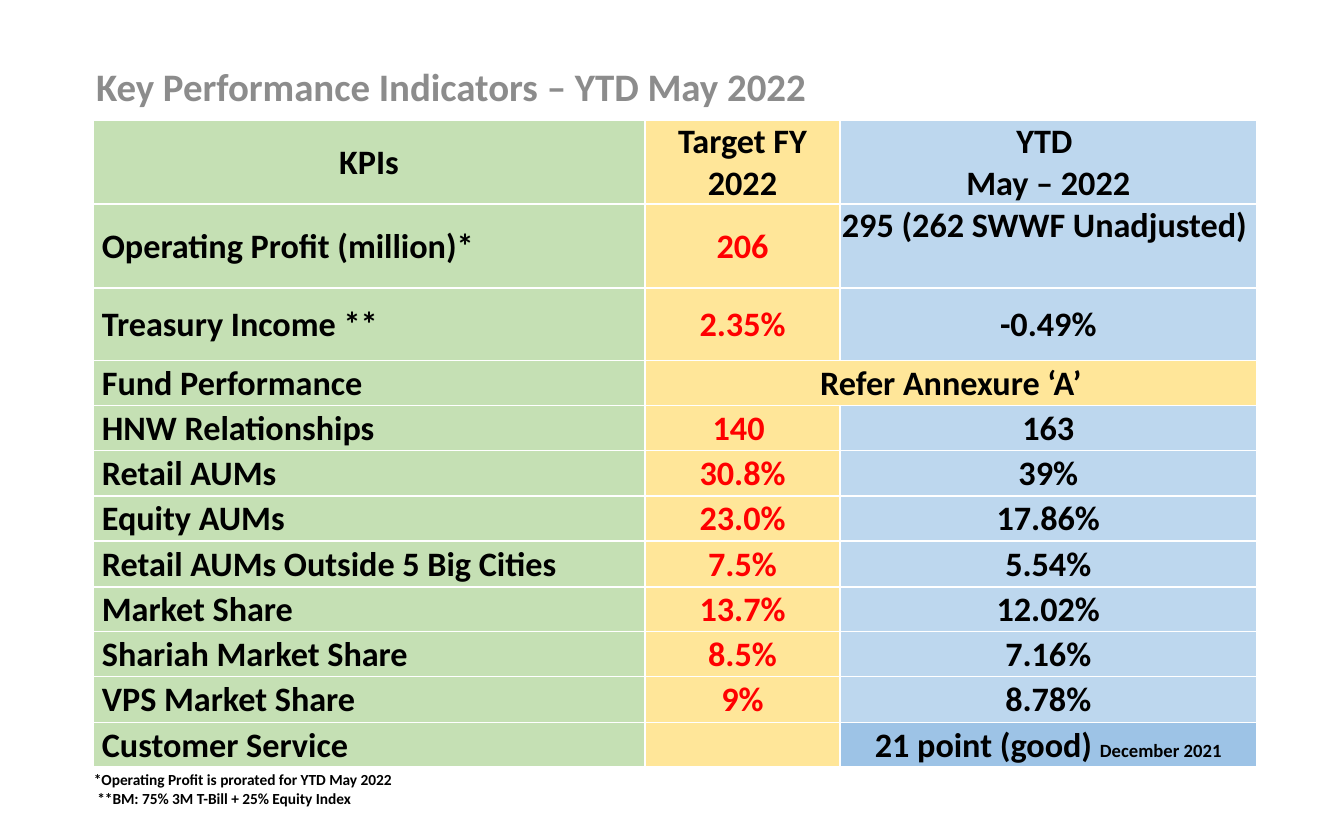
from dataclasses import dataclass

from pptx import Presentation
from pptx.dml.color import RGBColor
from pptx.enum.text import MSO_ANCHOR as Anchor, PP_ALIGN as Align
from pptx.util import Inches, Pt


@dataclass(frozen=True)
class Theme:
    font: str = "Calibri"
    title_size: float = 25
    table_size: float = 22
    remark_size: float = 12
    note_size: float = 9.9
    title: str = "8C8C8C"
    text: str = "000000"
    target: str = "FF0000"
    green: str = "C5E0B4"
    yellow: str = "FFE699"
    blue: str = "BDD7EE"
    dark_blue: str = "9DC3E6"


THEME = Theme()

COLUMN_WIDTHS = (4.93, 1.74, 3.72)
ROW_HEIGHTS = (0.75, 0.75, 0.65, 0.4, 0.4, 0.41, 0.4, 0.41, 0.4, 0.4, 0.41, 0.4)
HEADER = ("KPIs", "Target FY 2022", "YTD \nMay – 2022")
KPIS = (
    ("Operating Profit (million)*", "206", "295 (262 SWWF Unadjusted) "),
    ("Treasury Income **", "2.35%", "-0.49%"),
    ("Fund Performance", "Refer Annexure ‘A’", ""),
    ("HNW Relationships", "140 ", "163"),
    ("Retail AUMs", "30.8%", "39%"),
    ("Equity AUMs", "23.0%", "17.86%"),
    ("Retail AUMs Outside 5 Big Cities", "7.5%", "5.54%"),
    ("Market Share", "13.7%", "12.02%"),
    ("Shariah Market Share", "8.5%", "7.16%"),
    ("VPS Market Share", "9%", "8.78%"),
    ("Customer Service", "", "21 point (good) "),
)
PROFIT_ROW, FUND_ROW, SERVICE_ROW = 1, 3, 11


def add_span(para, text, size, color):
    span = para.add_run()
    span.text = text
    formats = {"name": THEME.font, "size": Pt(size), "bold": True}
    for name, value in formats.items():
        setattr(span.font, name, value)
    span.font.color.rgb = RGBColor.from_string(color)


def write_lines(frame, text, size, color, **para_formats):
    for index, line in enumerate(text.split("\n")):
        para = frame.add_paragraph() if index else frame.paragraphs[0]
        for name, value in para_formats.items():
            setattr(para, name, value)
        if line:
            add_span(para, line, size, color)
        else:
            para.font.size = Pt(size)


def add_text(page, place, text, size, color, anchor=Anchor.TOP, **para_formats):
    box = page.shapes.add_textbox(*map(Inches, place))
    box.text_frame.word_wrap = True
    box.text_frame.vertical_anchor = anchor
    write_lines(box.text_frame, text, size, color, **para_formats)


def fill_cell(cell, text, fill, color, is_label):
    formats = {
        "margin_left": Inches(0.08 if is_label else 0.01),
        "margin_top": Inches(0.01),
        "margin_right": Inches(0.01),
        "margin_bottom": 0,
        "vertical_anchor": Anchor.MIDDLE,
    }
    for name, value in formats.items():
        setattr(cell, name, value)
    cell.fill.solid()
    cell.fill.fore_color.rgb = RGBColor.from_string(fill)
    align = Align.LEFT if is_label else Align.CENTER
    write_lines(cell.text_frame, text, THEME.table_size, color, alignment=align)


def add_kpi_table(page):
    table = page.shapes.add_table(
        len(ROW_HEIGHTS), len(COLUMN_WIDTHS), Inches(0.83), Inches(1.07),
        Inches(sum(COLUMN_WIDTHS)), Inches(sum(ROW_HEIGHTS))).table
    table.horz_banding = False
    for column, width in zip(table.columns, COLUMN_WIDTHS):
        column.width = Inches(width)
    for row, height in zip(table.rows, ROW_HEIGHTS):
        row.height = Inches(height)

    # Each column has its own fill; target values are red
    fills = (THEME.green, THEME.yellow, THEME.blue)
    for r, values in enumerate((HEADER, *KPIS)):
        for c, text in enumerate(values):
            is_target = c == 1 and r not in (0, FUND_ROW)
            color = THEME.target if is_target else THEME.text
            fill_cell(table.cell(r, c), text, fills[c], color, c == 0 and r > 0)

    # Cells that differ from their column
    table.cell(FUND_ROW, 1).merge(table.cell(FUND_ROW, 2))
    table.cell(PROFIT_ROW, 2).vertical_anchor = Anchor.TOP
    service = table.cell(SERVICE_ROW, 2)
    service.fill.fore_color.rgb = RGBColor.from_string(THEME.dark_blue)
    add_span(service.text_frame.paragraphs[0], "December 2021",
             THEME.remark_size, THEME.text)


def main():
    deck = Presentation()
    deck.slide_width, deck.slide_height = Inches(12), Inches(7.5)
    page = deck.slides.add_slide(deck.slide_layouts[6])

    # Title
    add_text(page, (0.76, 0.47, 9.32, 0.65),
             "Key Performance Indicators – YTD May 2022",
             THEME.title_size, THEME.title, Anchor.MIDDLE, line_spacing=0.9)

    # Indicators
    add_kpi_table(page)

    # Footnotes
    add_text(page, (0.74, 6.83, 5.94, 0.43),
             "*Operating Profit is prorated for YTD May 2022\n"
             " **BM: 75% 3M T-Bill + 25% Equity Index",
             THEME.note_size, THEME.text)

    deck.save("out.pptx")


if __name__ == "__main__":
    main()
